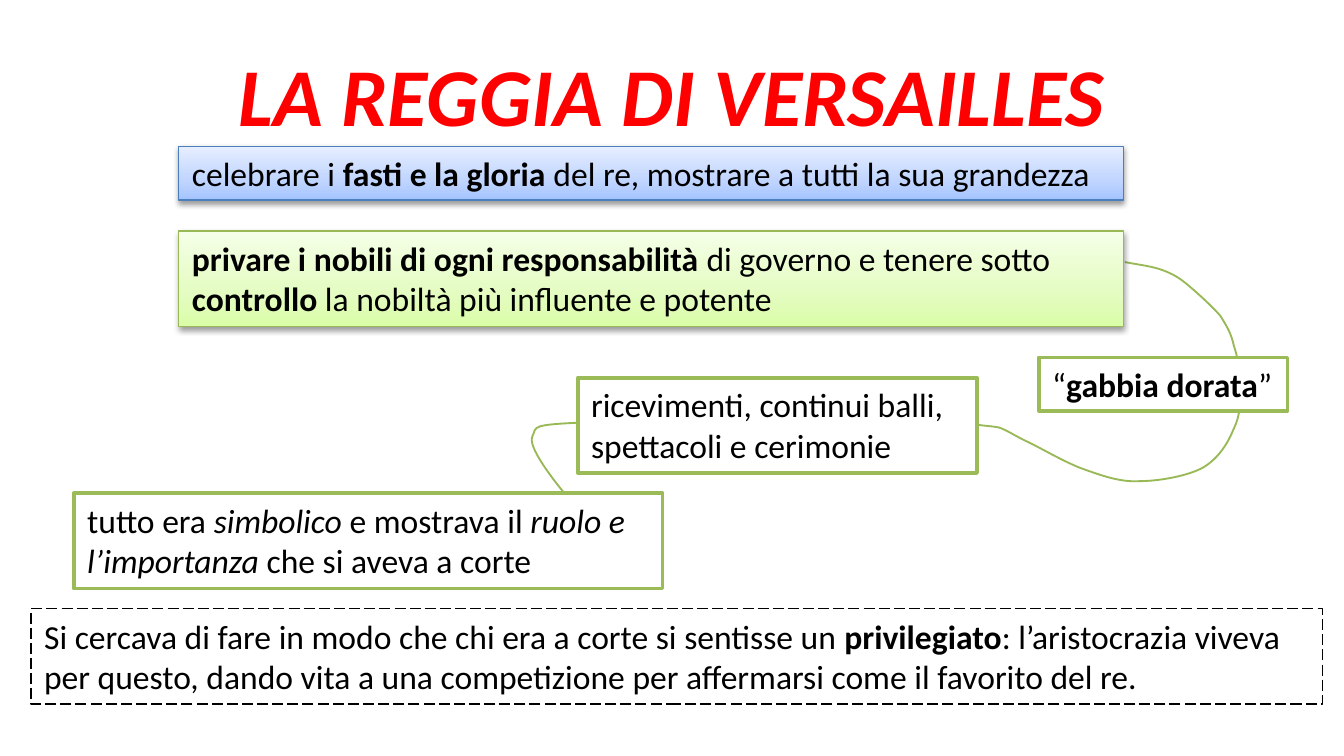
from copy import deepcopy

from lxml import etree
from pptx import Presentation, util as u
from pptx.dml.color import RGBColor
from pptx.enum import dml, shapes, text
from pptx.oxml.ns import qn

FONT = "Calibri"
COLORS = {
    "title": "FF0000",
    "text": "000000",
    "white": "FFFFFF",
    "blue_line": "4B7EBC",
    "green_line": "98B955",
    "green_frame": "9BBB59",
}
BLUE_STOPS = [(0, "A4C4FF"), (0.35, "BFD4FF"), (1, "E6EEFF")]
GREEN_STOPS = [(0, "DAFDA7"), (0.35, "E4FCC2"), (1, "F5FFE7")]

# Hundredths of an inch: the start, then two control points and an end per curve.
THREAD_START = (837, 195)
THREAD_CURVES = [
    [(847, 197), (857, 198), (865, 201)],
    [(873, 204), (878, 207), (885, 213)],
    [(892, 219), (902, 228), (908, 235)],
    [(913, 243), (916, 248), (918, 257)],
    [(921, 266), (923, 277), (923, 288)],
    [(923, 298), (923, 309), (918, 319)],
    [(914, 329), (907, 341), (895, 348)],
    [(884, 354), (863, 358), (848, 358)],
    [(834, 359), (820, 354), (806, 349)],
    [(792, 344), (774, 333), (763, 328)],
    [(753, 323), (749, 320), (743, 318)],
    [(737, 317), (733, 317), (727, 316)],
    [(721, 316), (705, 315), (705, 315)],
    [(705, 315), (443, 314), (443, 314)],
    [(392, 316), (400, 317), (396, 325)],
    [(392, 334), (420, 367), (420, 367)],
]


def rgb(name):
    return RGBColor.from_string(COLORS[name])


def place(shape, left, top, width, height):
    shape.left, shape.top = u.Inches(left), u.Inches(top)
    shape.width, shape.height = u.Inches(width), u.Inches(height)


def add_run(paragraph, content, size=18, color="text", style=""):
    """Add one run; style holds "b" for bold and "i" for italic."""
    run = paragraph.add_run()
    run.text = content
    run.font.name = FONT
    run.font.size = u.Pt(size)
    run.font.bold = "b" in style
    run.font.italic = "i" in style
    run.font.color.rgb = rgb(color)


def add_title(slide, content):
    title = slide.shapes.title
    place(title, 0.5, 0.23, 9, 0.93)
    frame = title.text_frame
    frame.auto_size = text.MSO_AUTO_SIZE.NONE
    frame.vertical_anchor = text.MSO_ANCHOR.MIDDLE
    frame.paragraphs[0].alignment = text.PP_ALIGN.CENTER
    add_run(frame.paragraphs[0], content, 44, "title", "bi")


def add_thread(slide):
    """Draw the curved line that links the boxes."""
    points = [point for curve in THREAD_CURVES for point in curve]
    builder = slide.shapes.build_freeform(*THREAD_START, scale=u.Inches(0.01))
    builder.add_line_segments(points, close=False)
    thread = builder.convert_to_shape()
    thread.shadow.inherit = False
    thread.fill.background()
    thread.line.color.rgb = rgb("green_line")
    thread.line.width = u.Pt(1)

    # Each three straight segments become one Bézier curve.
    outline = next(thread._element.iter(qn("a:path")))
    segments = outline.findall(qn("a:lnTo"))
    for start in range(0, len(segments), 3):
        curve = etree.SubElement(outline, qn("a:cubicBezTo"))
        for segment in segments[start:start + 3]:
            curve.append(segment[0])
            outline.remove(segment)


def set_gradient(shape, stops):
    shape.fill.gradient()
    shape.fill.gradient_angle = 90
    stop_list = next(shape._element.iter(qn("a:gsLst")))
    stop_list.append(deepcopy(stop_list[0]))
    for stop, (position, color) in zip(shape.fill.gradient_stops, stops):
        stop.position = position
        stop.color.rgb = RGBColor.from_string(color)


def add_shadow(shape):
    effects = shape._element.spPr.find(qn("a:effectLst"))
    shadow = etree.SubElement(
        effects, qn("a:outerShdw"), blurRad=str(u.Pt(3.1)),
        dist=str(u.Pt(1.6)), dir="5400000", rotWithShape="0")
    color = etree.SubElement(shadow, qn("a:srgbClr"), val=COLORS["text"])
    etree.SubElement(color, qn("a:alpha"), val="38000")


def add_box(slide, bounds, runs, line="green_frame", width=2, wrap=True):
    """Add a framed white box with (text, style) runs."""
    box = slide.shapes.add_shape(shapes.MSO_SHAPE.RECTANGLE, 0, 0, 0, 0)
    place(box, *bounds)
    box.shadow.inherit = False
    box.fill.solid()
    box.fill.fore_color.rgb = rgb("white")
    box.line.color.rgb = rgb(line)
    box.line.width = u.Pt(width)
    frame = box.text_frame
    frame.word_wrap = wrap
    frame.auto_size = text.MSO_AUTO_SIZE.SHAPE_TO_FIT_TEXT
    frame.vertical_anchor = text.MSO_ANCHOR.TOP
    paragraph = frame.paragraphs[0]
    paragraph.alignment = text.PP_ALIGN.LEFT
    for content, style in runs:
        add_run(paragraph, content, style=style)
    return box


def add_gradient_box(slide, bounds, runs, line, stops):
    box = add_box(slide, bounds, runs, line, 0.75)
    set_gradient(box, stops)
    add_shadow(box)


def add_dashed_box(slide, bounds, runs):
    box = add_box(slide, bounds, runs, "text", 0.75)
    box.fill.background()
    box.line.dash_style = dml.MSO_LINE.LONG_DASH


def main():
    presentation = Presentation()
    presentation.slide_width = u.Inches(10)
    presentation.slide_height = presentation.slide_width * 9 // 16
    slide = presentation.slides.add_slide(presentation.slide_layouts[5])

    add_thread(slide)
    add_title(slide, "LA REGGIA DI VERSAILLES")
    add_gradient_box(slide, (1.33, 1.09, 7.03, 0.4), [
        ("celebrare i ", ""),
        ("fasti e la gloria ", "b"),
        ("del re, mostrare a tutti la sua grandezza", ""),
    ], "blue_line", BLUE_STOPS)
    add_dashed_box(slide, (0.23, 4.53, 9.61, 0.71), [
        ("Si cercava di fare in modo che chi era a corte si sentisse un ", ""),
        ("privilegiato", "b"),
        (": l’aristocrazia viveva per questo, dando vita a una competizione "
         "per affermarsi come il favorito del re.", ""),
    ])
    add_gradient_box(slide, (1.33, 1.72, 7.03, 0.71), [
        ("privare i nobili di ogni responsabilità ", "b"),
        ("di governo e tenere sotto ", ""),
        ("controllo", "b"),
        (" la nobiltà più influente e potente", ""),
    ], "green_line", GREEN_STOPS)
    add_box(slide, (7.73, 2.66, 1.85, 0.4),
            [("“", ""), ("gabbia dorata", "b"), ("”", "")], wrap=False)
    add_box(slide, (4.3, 2.81, 2.97, 0.71),
            [("ricevimenti, continui balli, spettacoli e cerimonie", "")])
    add_box(slide, (0.55, 3.67, 4.38, 0.71), [
        ("tutto era ", ""),
        ("simbolico", "i"),
        (" e mostrava il ", ""),
        ("ruolo e l’importanza", "i"),
        (" che si aveva a corte", ""),
    ])
    presentation.save("out.pptx")


if __name__ == "__main__":
    main()
